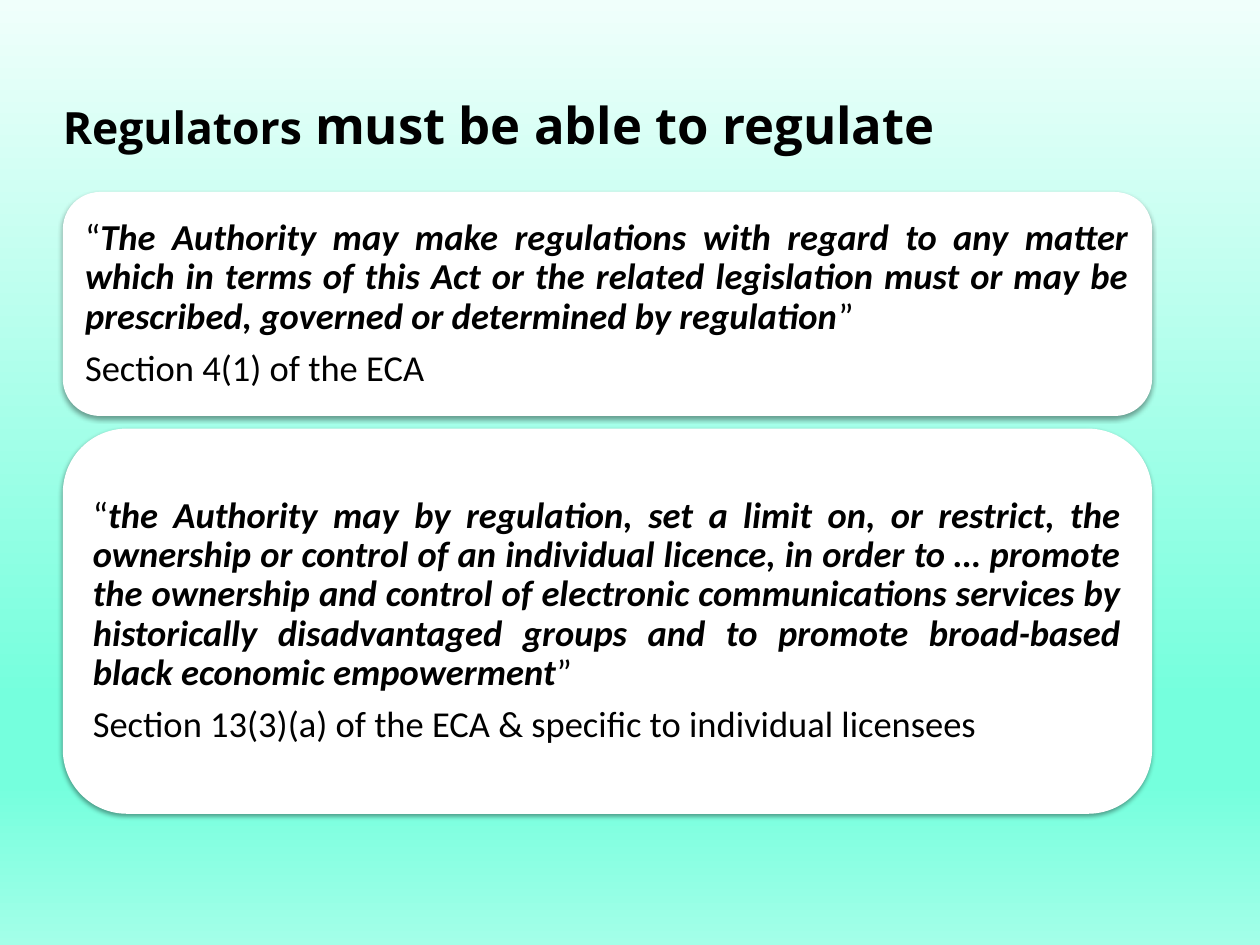
from pptx import Presentation
from pptx.dml.color import RGBColor
from pptx.enum.shapes import MSO_SHAPE
from pptx.enum.text import MSO_ANCHOR, MSO_AUTO_SIZE, PP_ALIGN
from pptx.oxml import parse_xml
from pptx.oxml.ns import nsdecls, qn
from pptx.util import Cm, Inches, Pt

ROUNDED = MSO_SHAPE.ROUNDED_RECTANGLE
MIDDLE = MSO_ANCHOR.MIDDLE
JUSTIFY = PP_ALIGN.JUSTIFY
NO_AUTOFIT = MSO_AUTO_SIZE.NONE

COLORS = {"text": "000000", "card": "FFFFFF", "shadow": "000000",
          "top": "F0FFFB", "deep": "75FFDD", "bottom": "A3FFE8"}
BACKGROUND_STOPS = [(0, "top"), (74, "deep"), (83, "deep"), (100, "bottom")]
LEFT, CARD_WIDTH = 0.55, 9.53
CARD_TOP, CARD_GAP = 1.68, 0.11

CARDS = [
    (1.96,
     "The Authority may make regulations with regard to any matter which in terms "
     "of this Act or the related legislation must or may be prescribed, governed or "
     "determined by regulation",
     "Section 4(1) of the ECA"),
    (3.37,
     "the Authority may by regulation, set a limit on, or restrict, the ownership or "
     "control of an individual licence, in order to … promote the ownership and "
     "control of electronic communications services by historically disadvantaged "
     "groups and to promote broad-based black economic empowerment",
     "Section 13(3)(a) of the ECA & specific to individual licensees"),
]


def prepare_frame(frame, inset):
    frame.word_wrap = True
    frame.auto_size = NO_AUTOFIT
    frame.vertical_anchor = MIDDLE
    frame.margin_left = frame.margin_right = Inches(inset)
    frame.margin_top = frame.margin_bottom = Inches(inset)


def add_span(para, text, font, size, bold=False, italic=False):
    span = para.add_run()
    span.text = text
    span.font.name = font
    span.font.size = Pt(size)
    span.font.bold = bold
    span.font.italic = italic
    span.font.color.rgb = RGBColor.from_string(COLORS["text"])


deck = Presentation()
deck.slide_width = Cm(28)
deck.slide_height = Cm(21)
page = deck.slides.add_slide(deck.slide_layouts[5])

backdrop = page.background.fill
backdrop.gradient()
backdrop.gradient_angle = 270
stops = page.element.find(".//" + qn("a:gsLst"))
for stop in list(stops):
    stops.remove(stop)
for share, color in BACKGROUND_STOPS:
    stops.append(parse_xml(
        f'<a:gs {nsdecls("a")} pos="{share * 1000}">'
        f'<a:srgbClr val="{COLORS[color]}"/></a:gs>'))

title = page.shapes.title
title.left, title.top = Inches(LEFT), Inches(0.43)
title.width, title.height = Inches(9.92), Inches(1.38)
prepare_frame(title.text_frame, 0)
para = title.text_frame.paragraphs[0]
para.alignment = JUSTIFY
para.line_spacing = 0.93
add_span(para, "Regulators", "Open Sans", 28, bold=True)
add_span(para, " must be able to regulate", "Open Sans", 32, bold=True)

top = CARD_TOP
for height, quote, section in CARDS:
    card = page.shapes.add_shape(
        ROUNDED, Inches(LEFT), Inches(top), Inches(CARD_WIDTH), Inches(height))
    card.fill.solid()
    card.fill.fore_color.rgb = RGBColor.from_string(COLORS["card"])
    card.line.fill.background()
    card.shadow.inherit = False
    effects = card.element.spPr.find(qn("a:effectLst"))
    effects.append(parse_xml(
        f'<a:outerShdw {nsdecls("a")} blurRad="{Pt(3.1)}" dist="{Pt(1.6)}" '
        f'dir="5400000" rotWithShape="0"><a:srgbClr val="{COLORS["shadow"]}">'
        '<a:alpha val="38000"/></a:srgbClr></a:outerShdw>'))

    frame = card.text_frame
    prepare_frame(frame, 0.1)
    quotation, citation = frame.paragraphs[0], frame.add_paragraph()
    for para in (quotation, citation):
        para.alignment = JUSTIFY
        para.line_spacing = 0.9
        para.space_after = Pt(8)
    add_span(quotation, "“", "Calibri", 23)
    add_span(quotation, quote, "Calibri", 23, bold=True, italic=True)
    add_span(quotation, "”", "Calibri", 23)
    add_span(citation, section, "Calibri", 23)
    top += height + CARD_GAP

deck.save("out.pptx")
